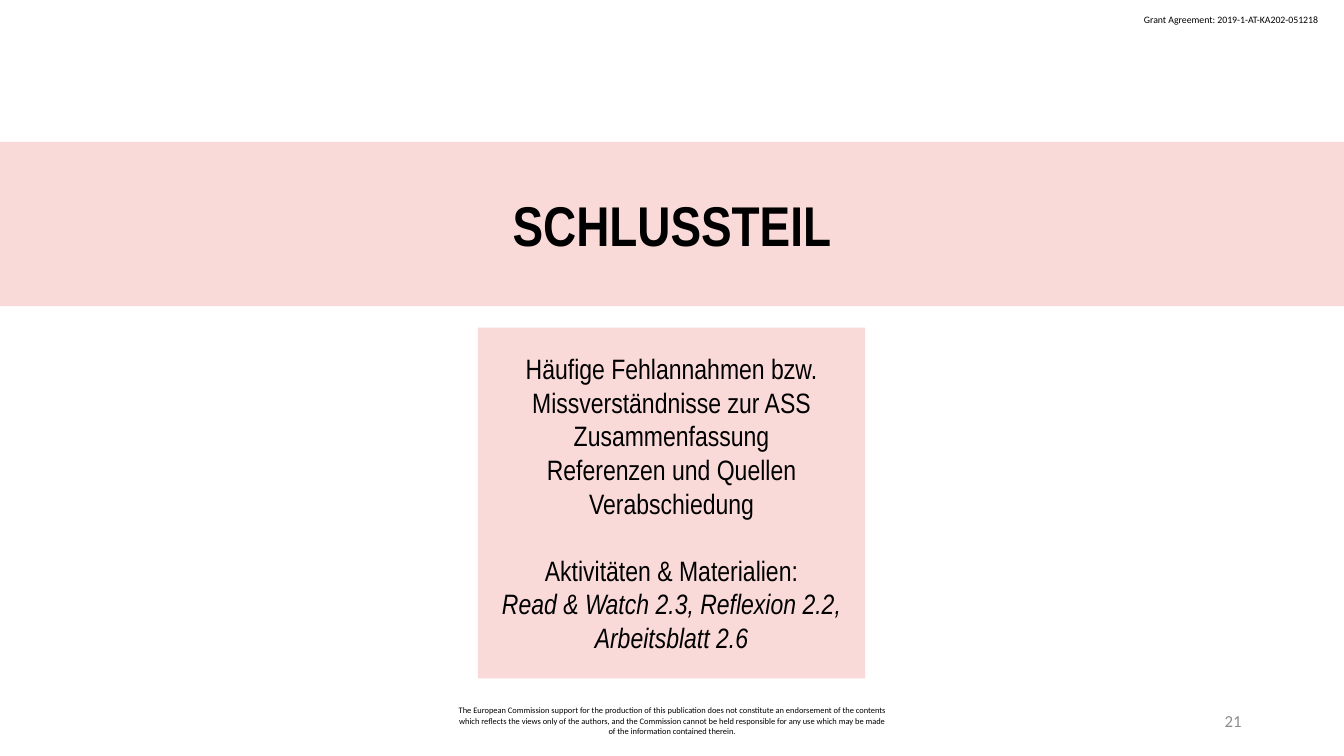
"""Build the closing section slide."""
from pptx import Presentation
from pptx import util as u
from pptx.dml.color import RGBColor
from pptx.enum import text as t
from pptx.oxml.ns import qn

COLS, ROWS = 160, 90
WIDE, HIGH = u.Inches(13.33), u.Inches(7.5)
HUES = {"band": "F9DAD9", "ink": "000000", "page": "8C8C8C"}
HEAD, BODY = "Arial Narrow", "Calibri"
LEFT, MID, RIGHT = t.PP_ALIGN.LEFT, t.PP_ALIGN.CENTER, t.PP_ALIGN.RIGHT

GRANT = "Grant Agreement: 2019-1-AT-KA202-051218"
NOTICE = (
    "The European Commission support for the production of this publication "
    "does not constitute an endorsement of the contents which reflects the "
    "views only of the authors, and the Commission cannot be held responsible "
    "for any use which may be made of the information contained therein."
)
TOPICS = [
    "Häufige Fehlannahmen bzw. Missverständnisse zur ASS",
    "Zusammenfassung",
    "Referenzen und Quellen",
    "Verabschiedung",
    "Aktivitäten & Materialien:",
    "Read & Watch 2.3, Reflexion 2.2, Arbeitsblatt 2.6",
]


def hue(name):
    """Return the named colour."""
    return RGBColor.from_string(HUES[name])


def cells(x, y, w, h):
    """Turn grid columns and rows into slide lengths."""
    return (int(x * WIDE / COLS), int(y * HIGH / ROWS),
            int(w * WIDE / COLS), int(h * HIGH / ROWS))


def style(para, face, size, align, ink="ink", bold=False):
    """Set the font and alignment of a paragraph."""
    para.alignment = align
    para.line_spacing = 1.0
    para.space_before = u.Pt(0)
    font = para.font
    font.name, font.size, font.bold = face, u.Pt(size), bold
    font.color.rgb = hue(ink)


def panel(holder, spot, lines, size, bold=False):
    """Move a placeholder, tint it and fill it with centred lines."""
    holder.left, holder.top, holder.width, holder.height = cells(*spot)
    holder.fill.solid()
    holder.fill.fore_color.rgb = hue("band")
    frame = holder.text_frame
    frame.text = "\n".join(lines)
    frame.word_wrap = True
    frame.auto_size = t.MSO_AUTO_SIZE.NONE
    frame.vertical_anchor = t.MSO_ANCHOR.MIDDLE
    frame.margin_left = frame.margin_right = u.Inches(0.13)
    frame.margin_top = frame.margin_bottom = u.Inches(0.07)
    for para in frame.paragraphs:
        props = para._p.get_or_add_pPr()
        props.set("marL", "0")
        props.set("indent", "0")
        props.append(props.makeelement(qn("a:buNone"), {}))
        style(para, HEAD, size, MID, bold=bold)
    return frame.paragraphs


def label(slide, spot, words, size, align, ink="ink", wrap=True):
    """Add a small line of text at the edge of the slide."""
    frame = slide.shapes.add_textbox(*cells(*spot)).text_frame
    frame.text = words
    frame.word_wrap = wrap
    frame.vertical_anchor = t.MSO_ANCHOR.MIDDLE if wrap else t.MSO_ANCHOR.TOP
    style(frame.paragraphs[0], BODY, size, align, ink)


def main():
    """Build and save the slide."""
    deck = Presentation()
    deck.slide_width, deck.slide_height = WIDE, HIGH
    slide = deck.slides.add_slide(deck.slide_layouts[1])
    label(slide, (135, 1, 23.64, 2.64), GRANT, 7, LEFT, wrap=False)
    label(slide, (53, 83.4, 54, 4.8), NOTICE, 6, MID)
    label(slide, (113, 83.4, 36, 4.8), "21", 12, RIGHT, "page")
    panel(slide.shapes.title, (0, 16.9, COLS, 19.55), ["SCHLUSSTEIL"], 40, True)
    topics = panel(slide.placeholders[1], (56.9, 39, 46.1, 41.75), TOPICS, 20)
    topics[-2].space_before = u.Pt(24)
    topics[-1].font.italic = True
    deck.save("out.pptx")


if __name__ == "__main__":
    main()
